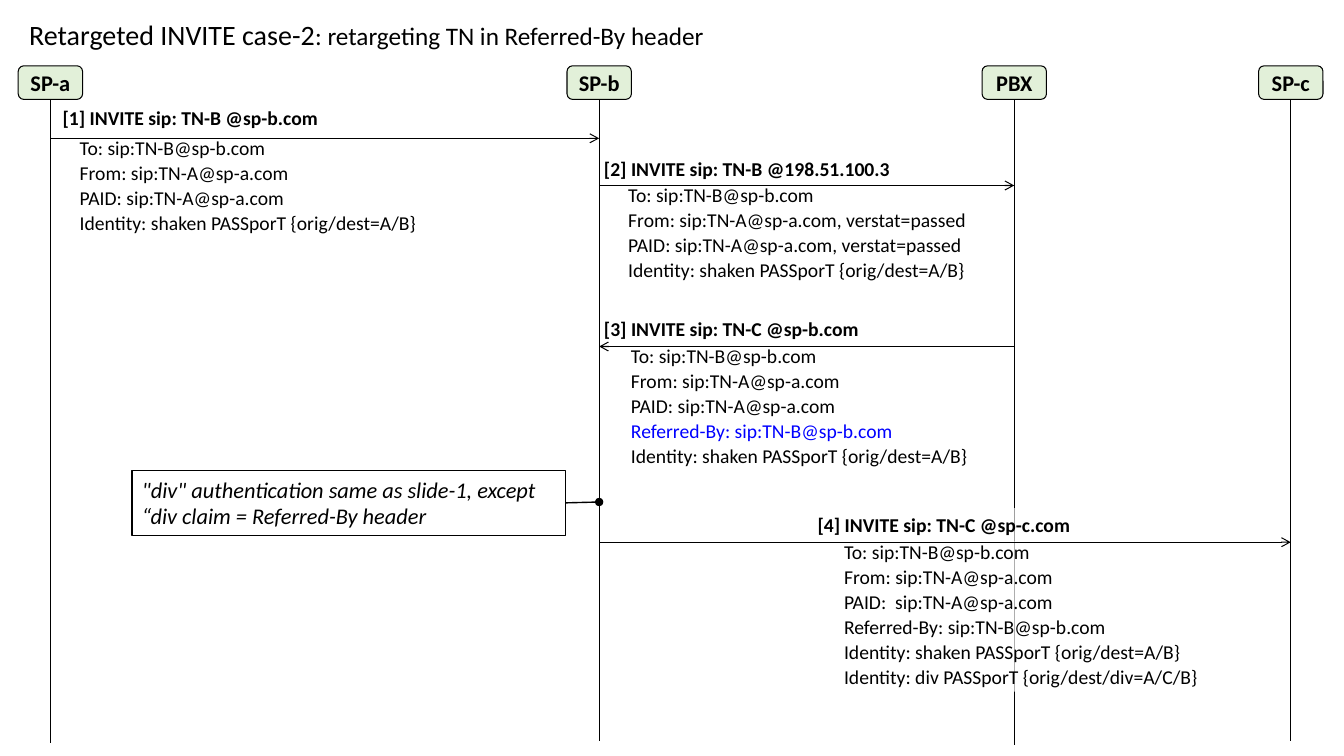
import pptx
import pptx.util
import pptx.dml.color
import pptx.enum.shapes
import pptx.enum.text
import pptx.oxml.ns
import lxml.etree

Pt = pptx.util.Pt
SHAPES = pptx.enum.shapes.MSO_SHAPE
ALIGN = pptx.enum.text.PP_ALIGN
ANCHOR = pptx.enum.text.MSO_ANCHOR

COLORS = {"ink": "000000", "box": "E2F0D9", "paper": "FFFFFF", "added": "0000FF"}
FONT = "Calibri"
TITLE = [("Retargeted INVITE case-2", 20), (": retargeting TN in Referred-By header", 18)]
PARTICIPANTS = [("SP-a", 36, 531), ("SP-b", 428, 529), ("PBX", 724.5, 532), ("SP-c", 922, 529)]
NOTE = '"div" authentication same as slide-1, except “div claim = Referred-By header'
MESSAGES = [
    {"route": ("SP-a", "SP-b"), "y": 98.8, "heading": "[1] INVITE sip: TN-B @sp-b.com",
     "heading_box": (35.3, 72.7, 286), "body_box": (47.5, 279), "opacity": None,
     "lines": ["To: sip:TN-B@sp-b.com", "From: sip:TN-A@sp-a.com", "PAID: sip:TN-A@sp-a.com",
               "Identity: shaken PASSporT {orig/dest=A/B}"]},
    {"route": ("SP-b", "PBX"), "y": 132.5, "heading": "[2] INVITE sip: TN-B @198.51.100.3",
     "heading_box": (422, 108.7, 304), "body_box": (439.3, 287), "opacity": None,
     "lines": ["To: sip:TN-B@sp-b.com", "From: sip:TN-A@sp-a.com, verstat=passed",
               "PAID: sip:TN-A@sp-a.com, verstat=passed",
               "Identity: shaken PASSporT {orig/dest=A/B}"]},
    {"route": ("PBX", "SP-b"), "y": 247.5, "heading": "[3] INVITE sip: TN-C @sp-b.com",
     "heading_box": (422, 223.2, 304), "body_box": (441.3, 274), "opacity": None,
     "added": "Referred-By: sip:TN-B@sp-b.com",
     "lines": ["To: sip:TN-B@sp-b.com", "From: sip:TN-A@sp-a.com", "PAID: sip:TN-A@sp-a.com",
               "Referred-By: sip:TN-B@sp-b.com", "Identity: shaken PASSporT {orig/dest=A/B}"]},
    {"route": ("SP-b", "SP-c"), "y": 387.3, "heading": "[4] INVITE sip: TN-C @sp-c.com",
     "heading_box": (574.6, 363, 248), "body_box": (593.5, 282), "opacity": (62, 68),
     "lines": ["To: sip:TN-B@sp-b.com", "From: sip:TN-A@sp-a.com", "PAID:  sip:TN-A@sp-a.com",
               "Referred-By: sip:TN-B@sp-b.com", "Identity: shaken PASSporT {orig/dest=A/B}",
               "Identity: div PASSporT {orig/dest/div=A/C/B}"]},
]
BOX_TOP, BOX_WIDTH, BOX_HEIGHT = 47, 46, 24
HEADING_HEIGHT, LINE_HEIGHT = 25, 17.9


def rgb(name):
    return pptx.dml.color.RGBColor.from_string(COLORS[name])


def set_font(font, size, color="ink", bold=False, italic=False):
    font.name = FONT
    font.size = Pt(size)
    font.bold = bold
    font.italic = italic
    font.color.rgb = rgb(color)


def add_box(kind, left, top, width, height, fill=None, outlined=True):
    shape = slide.shapes.add_shape(kind, Pt(left), Pt(top), Pt(width), Pt(height))
    shape.shadow.inherit = False
    if fill:
        shape.fill.solid()
        shape.fill.fore_color.rgb = rgb(fill)
    else:
        shape.fill.background()
    if outlined:
        shape.line.color.rgb = rgb("ink")
        shape.line.width = Pt(0.75)
    else:
        shape.line.fill.background()
    shape.text_frame.word_wrap = True
    return shape


def set_margins(frame, across, down):
    frame.margin_left = frame.margin_right = Pt(across)
    frame.margin_top = frame.margin_bottom = Pt(down)


def add_line(start, end, width=0.75, head=None):
    connector = slide.shapes.add_connector(
        pptx.enum.shapes.MSO_CONNECTOR.STRAIGHT, *[Pt(value) for value in start + end])
    connector.line.color.rgb = rgb("ink")
    connector.line.width = Pt(width)
    if head:
        line = connector.line._get_or_add_ln()
        lxml.etree.SubElement(line, pptx.oxml.ns.qn("a:tailEnd"), type=head)
    lxml.etree.SubElement(connector._element.spPr, pptx.oxml.ns.qn("a:effectLst"))
    return connector


def add_lines(left, top, width, height, lines, margin, space, bold, opacity, added=None):
    if opacity:
        shape = add_box(SHAPES.RECTANGLE, left, top, width, height, "paper", False)
        color = shape._element.spPr.find(".//" + pptx.oxml.ns.qn("a:srgbClr"))
        lxml.etree.SubElement(color, pptx.oxml.ns.qn("a:alpha"), val=str(opacity * 1000))
    else:
        shape = slide.shapes.add_textbox(Pt(left), Pt(top), Pt(width), Pt(height))
    frame = shape.text_frame
    frame.word_wrap = True
    frame.vertical_anchor = ANCHOR.TOP
    set_margins(frame, 9.4, margin)
    frame.text = "\n".join(lines)
    for paragraph in frame.paragraphs:
        paragraph.alignment = ALIGN.LEFT
        paragraph.line_spacing = 0.9
        paragraph.space_before = Pt(space)
        set_font(paragraph.font, 14, "added" if paragraph.text == added else "ink", bold)


def add_participant(name, center, bottom):
    box = add_box(SHAPES.ROUNDED_RECTANGLE, center - BOX_WIDTH / 2, BOX_TOP,
                  BOX_WIDTH, BOX_HEIGHT, "box")
    frame = box.text_frame
    frame.word_wrap = False
    frame.vertical_anchor = ANCHOR.MIDDLE
    set_margins(frame, 0, 0)
    frame.text = name
    frame.paragraphs[0].alignment = ALIGN.CENTER
    set_font(frame.paragraphs[0].font, 16, bold=True)
    lifeline = add_line((center, BOX_TOP + BOX_HEIGHT), (center, bottom))
    lifeline.begin_connect(box, 2)


def add_message(message):
    left, top, width = message["heading_box"]
    heading_opacity, body_opacity = message["opacity"] or (None, None)
    body_left, body_width = message["body_box"]
    lines, y = message["lines"], message["y"]
    add_lines(body_left, y - 0.6, body_width, LINE_HEIGHT * len(lines), lines,
              0.7, 2.7, False, body_opacity, message.get("added"))
    add_lines(left, top, width, HEADING_HEIGHT, [message["heading"]],
              5, 8, True, heading_opacity)
    source, target = [centers[name] for name in message["route"]]
    add_line((source, y), (target, y), head="arrow")


def add_note():
    note = add_box(SHAPES.RECTANGLE, 94.3, 336.2, 310, 46)
    frame = note.text_frame
    frame.vertical_anchor = ANCHOR.TOP
    frame.text = NOTE
    frame.paragraphs[0].alignment = ALIGN.LEFT
    set_font(frame.paragraphs[0].font, 16, italic=True)
    pointer = add_line((404.3, 359.2), (centers["SP-b"], 358.6), 1, "oval")
    pointer.begin_connect(note, 3)


def add_title():
    frame = slide.shapes.add_textbox(Pt(13.7), Pt(0), Pt(926), Pt(52.5)).text_frame
    frame.word_wrap = True
    frame.vertical_anchor = ANCHOR.MIDDLE
    paragraph = frame.paragraphs[0]
    paragraph.line_spacing = 0.9
    for text, size in TITLE:
        run = paragraph.add_run()
        run.text = text
        set_font(run.font, size)


presentation = pptx.Presentation()
presentation.slide_width, presentation.slide_height = Pt(960), Pt(540)
slide = presentation.slides.add_slide(presentation.slide_layouts[6])
centers = {name: center for name, center, bottom in PARTICIPANTS}
for participant in PARTICIPANTS:
    add_participant(*participant)
for message in MESSAGES:
    add_message(message)
add_note()
add_title()
presentation.save("out.pptx")
